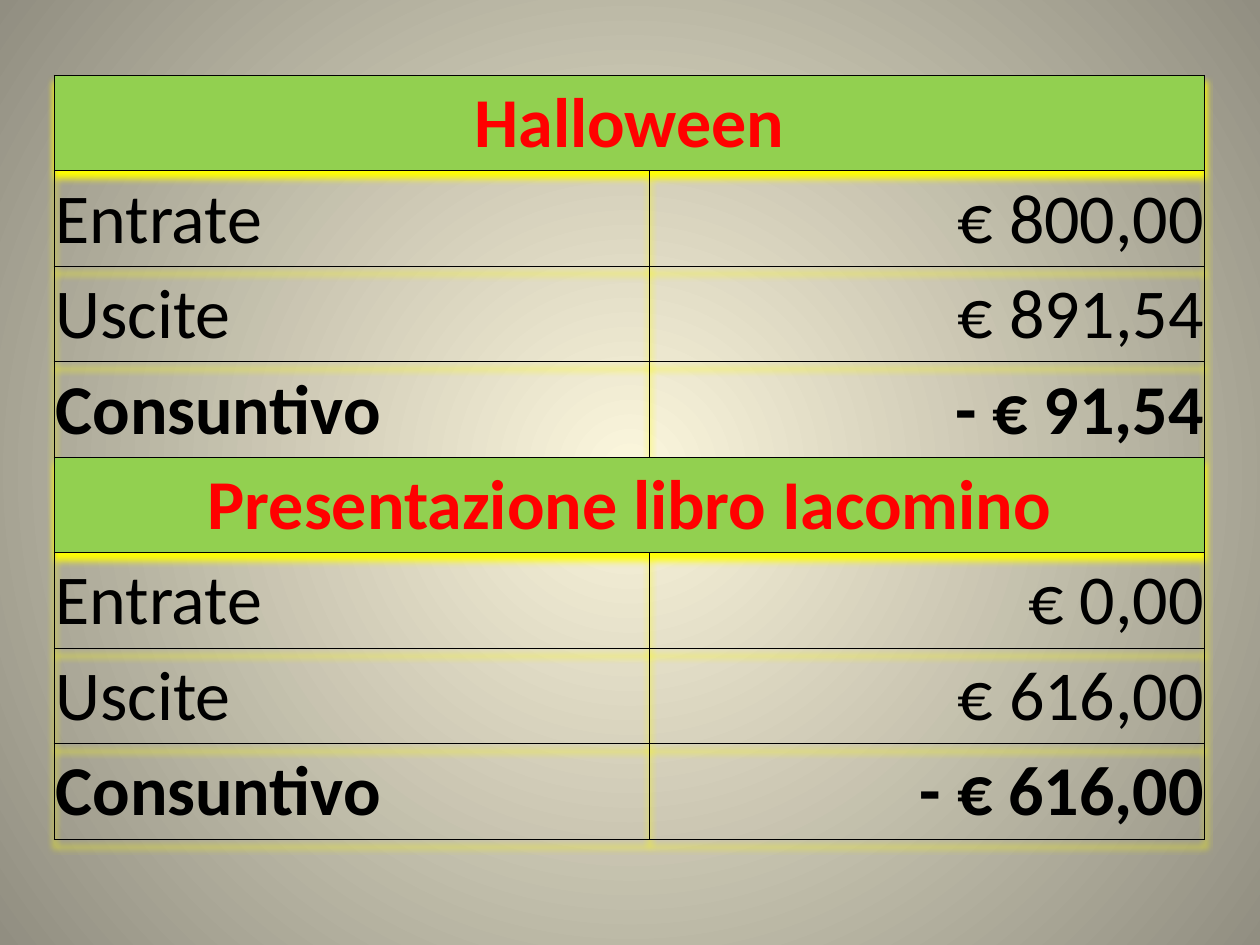
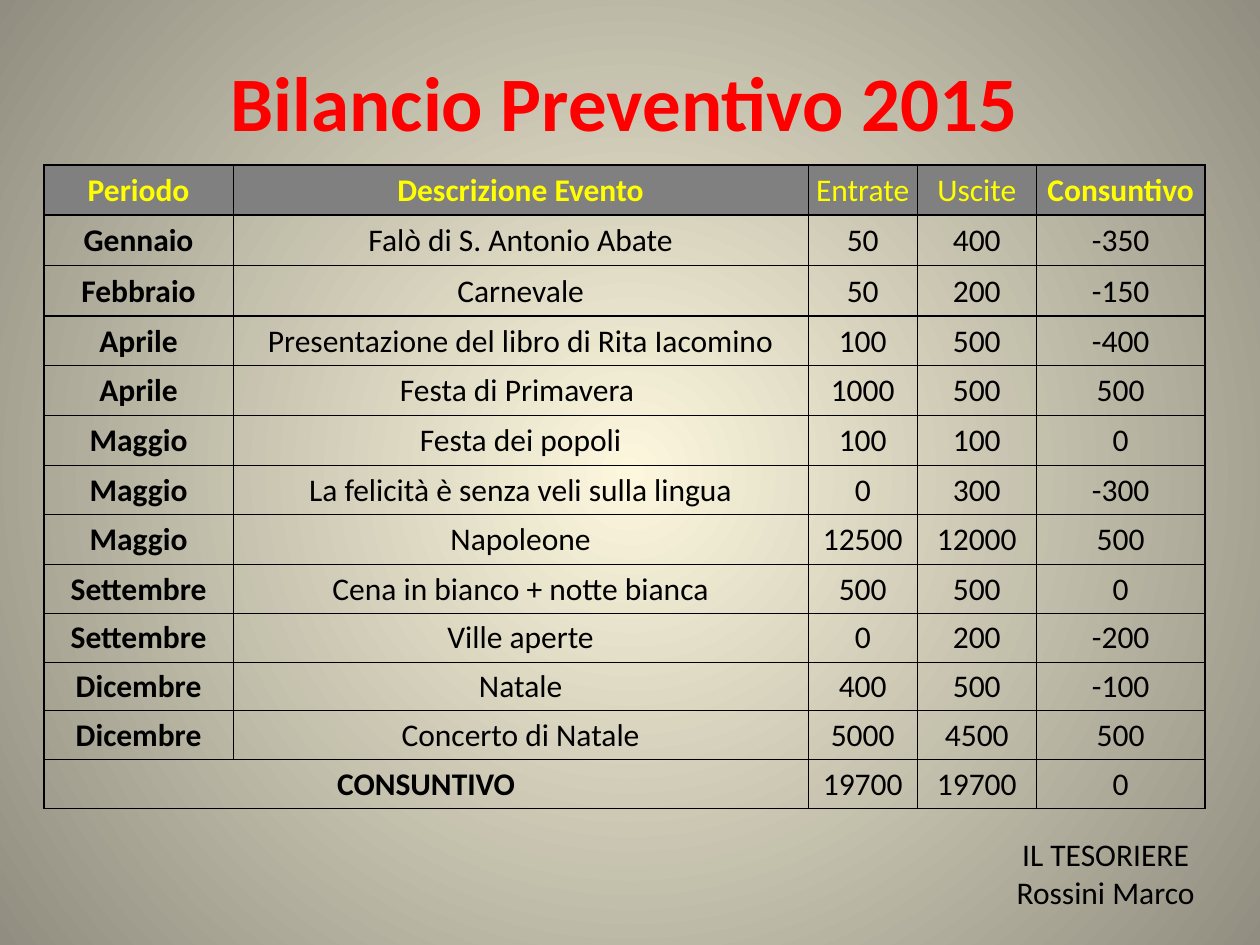
from lxml.etree import SubElement
from pptx import Presentation
from pptx.dml.color import RGBColor
from pptx.enum.text import MSO_ANCHOR, PP_ALIGN
from pptx.oxml import parse_xml
from pptx.oxml.ns import nsdecls, qn
from pptx.util import Pt

FONT = "Calibri"
BLACK, RED, YELLOW = "000000", "FF0000", "FFFF00"
GREEN, GREY = "92D050", "808080"
GLOW_CENTRE, GLOW_EDGE = "FCF7DD", "918E81"
THIN, HEAVY = 0.5, 1
PLAIN_TABLE_STYLE = "{2D5ABB26-0587-4C30-8999-92F81FD0307C}"

EVENT_RESULTS = [
    ("Halloween", "€ 800,00", "€ 891,54", "- € 91,54"),
    ("Presentazione libro Iacomino", "€ 0,00", "€ 616,00", "- € 616,00"),
]
RESULT_LABELS = ("Entrate", "Uscite", "Consuntivo")

BUDGET_TITLE = "Bilancio Preventivo 2015"
BUDGET_HEADINGS = ("Periodo", "Descrizione Evento", "Entrate", "Uscite", "Consuntivo")
BUDGET_EVENTS = [
    ("Gennaio", "Falò di S. Antonio Abate", 50, 400, -350),
    ("Febbraio", "Carnevale", 50, 200, -150),
    ("Aprile", "Presentazione del libro di Rita Iacomino", 100, 500, -400),
    ("Aprile", "Festa di Primavera ", 1000, 500, 500),
    ("Maggio", "Festa dei popoli", 100, 100, 0),
    ("Maggio", "La felicità è senza veli sulla lingua", 0, 300, -300),
    ("Maggio", "Napoleone", 12500, 12000, 500),
    ("Settembre", "Cena in bianco + notte bianca", 500, 500, 0),
    ("Settembre", "Ville aperte", 0, 200, -200),
    ("Dicembre", "Natale", 400, 500, -100),
    ("Dicembre", "Concerto di Natale", 5000, 4500, 500),
]
BUDGET_TOTAL = ("CONSUNTIVO", "", 19700, 19700, 0)
BUDGET_COLUMNS = (108, 328.6, 62.4, 68, 96.5)
BUDGET_ROWS = [69] + [28.8] * 3 + [28.4] * 5 + [27.9] * 5
HEAVY_BUDGET_LINES = {1, 2, 3, 4, 6, 8}


def rgb(colour):
    """Turn a hex string into a colour."""
    return RGBColor.from_string(colour)


def paint_background(master):
    """Give all slides the round glow."""
    glow = master.background.fill
    glow.gradient()
    for stop, colour in zip(glow.gradient_stops, (GLOW_CENTRE, GLOW_EDGE)):
        stop.color.rgb = rgb(colour)
    gradient = master.element.find(".//" + qn("a:gradFill"))
    gradient.remove(gradient.find(qn("a:lin")))
    circle = SubElement(gradient, qn("a:path"), {"path": "circle"})
    SubElement(circle, qn("a:fillToRect"), dict.fromkeys("ltrb", "50000"))


def style_paragraph(paragraph, size, colour, bold, align):
    """Format a paragraph and its runs."""
    paragraph.alignment = align
    for run in paragraph.runs:
        run.font.name = FONT
        run.font.size = Pt(size)
        run.font.bold = bold
        run.font.color.rgb = rgb(colour)


def draw_borders(cell, widths):
    """Draw the left, right, top and bottom borders; zero means none."""
    properties = cell._tc.get_or_add_tcPr()
    for position, (side, width) in enumerate(zip("LRTB", widths)):
        paint = f'<a:solidFill><a:srgbClr val="{BLACK}"/></a:solidFill>' if width else "<a:noFill/>"
        properties.insert(position, parse_xml(
            f'<a:ln{side} {nsdecls("a")} w="{Pt(width)}">{paint}</a:ln{side}>'))


def fill_cell(cell, text, size, borders, colour=BLACK, bold=False,
              align=PP_ALIGN.CENTER, fill=None):
    """Write and format one table cell."""
    cell.text_frame.text = str(text)
    style_paragraph(cell.text_frame.paragraphs[0], size, colour, bold, align)
    cell.vertical_anchor = MSO_ANCHOR.MIDDLE
    cell.margin_left = cell.margin_right = cell.margin_top = Pt(0.7)
    cell.margin_bottom = 0
    if fill:
        cell.fill.solid()
        cell.fill.fore_color.rgb = rgb(fill)
    else:
        cell.fill.background()
    draw_borders(cell, borders)


def add_plain_table(slide, left, top, columns, rows):
    """Add an unstyled table with the given column widths and row heights."""
    frame = slide.shapes.add_table(len(rows), len(columns), Pt(left), Pt(top),
                                   Pt(sum(columns)), Pt(sum(rows)))
    table = frame.table
    table.first_row = table.horz_banding = False
    table._tbl.tblPr.find(qn("a:tableStyleId")).text = PLAIN_TABLE_STYLE
    for column, width in zip(table.columns, columns):
        column.width = Pt(width)
    for row, height in zip(table.rows, rows):
        row.height = Pt(height)
    return table


def add_yellow_shadow(table):
    """Cast a soft yellow shadow below the table."""
    table._tbl.tblPr.insert(0, parse_xml(
        f'<a:effectLst {nsdecls("a")}><a:outerShdw blurRad="{Pt(4)}" dist="{Pt(4)}" '
        f'dir="5400000" algn="ctr" rotWithShape="0"><a:srgbClr val="{YELLOW}"/>'
        '</a:outerShdw></a:effectLst>'))


def add_event_results(slide, left, top, width, height):
    """Add one block of income, costs and balance for each event."""
    block = len(RESULT_LABELS) + 1
    count = block * len(EVENT_RESULTS)
    label_width = round(width * 0.517, 1)
    table = add_plain_table(slide, left, top, (label_width, width - label_width),
                            [height / count] * count)
    add_yellow_shadow(table)
    for index, (event, *amounts) in enumerate(EVENT_RESULTS):
        first = index * block
        table.cell(first, 0).merge(table.cell(first, 1))
        fill_cell(table.cell(first, 0), event, 40, (HEAVY, THIN, THIN, THIN),
                  RED, True, fill=GREEN)
        for row, (label, amount) in enumerate(zip(RESULT_LABELS, amounts), first + 1):
            bold = label == "Consuntivo"
            fill_cell(table.cell(row, 0), label, 40, (HEAVY, THIN, THIN, THIN),
                      bold=bold, align=PP_ALIGN.LEFT)
            fill_cell(table.cell(row, 1), amount, 40, (THIN,) * 4,
                      bold=bold, align=PP_ALIGN.RIGHT)


def add_budget(slide, left, top):
    """Add the yearly budget with its title, events and total."""
    table = add_plain_table(slide, left, top, BUDGET_COLUMNS, BUDGET_ROWS)
    last_row, last_column = len(BUDGET_ROWS) - 1, len(BUDGET_COLUMNS) - 1
    table.cell(0, 0).merge(table.cell(0, last_column))
    table.cell(last_row, 0).merge(table.cell(last_row, 1))
    fill_cell(table.cell(0, 0), BUDGET_TITLE, 44, (0, 0, 0, HEAVY), RED, True)
    lines = [HEAVY if line in HEAVY_BUDGET_LINES else THIN for line in range(last_row + 2)]
    for row, entries in enumerate([BUDGET_HEADINGS, *BUDGET_EVENTS, BUDGET_TOTAL], 1):
        heading = row == 1
        for column, entry in enumerate(entries):
            cell = table.cell(row, column)
            if cell.is_spanned:
                continue
            borders = (THIN if column else HEAVY,
                       HEAVY if column == last_column else THIN,
                       lines[row], lines[row + 1])
            bold = column == 0 or heading and column in (1, last_column)
            fill_cell(cell, entry, 18, borders, YELLOW if heading else BLACK, bold,
                      fill=GREY if heading else None)


def add_signature(slide, left, top, width, height):
    """Add the treasurer's signature."""
    signature = slide.shapes.add_textbox(Pt(left), Pt(top), Pt(width), Pt(height)).text_frame
    signature.word_wrap = True
    signature.text = "IL TESORIERE\nRossini Marco"
    for paragraph in signature.paragraphs:
        style_paragraph(paragraph, 18, BLACK, False, PP_ALIGN.CENTER)


def main():
    """Build and save the two slides."""
    deck = Presentation()
    deck.slide_width, deck.slide_height = Pt(720), Pt(540)
    paint_background(deck.slide_master)
    blank = deck.slide_layouts[6]
    add_event_results(deck.slides.add_slide(blank), 31, 43, 657.5, 436.6)
    budget_slide = deck.slides.add_slide(blank)
    add_budget(budget_slide, 25.2, 25.2)
    add_signature(budget_slide, 569.5, 473.8, 124.6, 51)
    deck.save("out.pptx")


if __name__ == "__main__":
    main()
